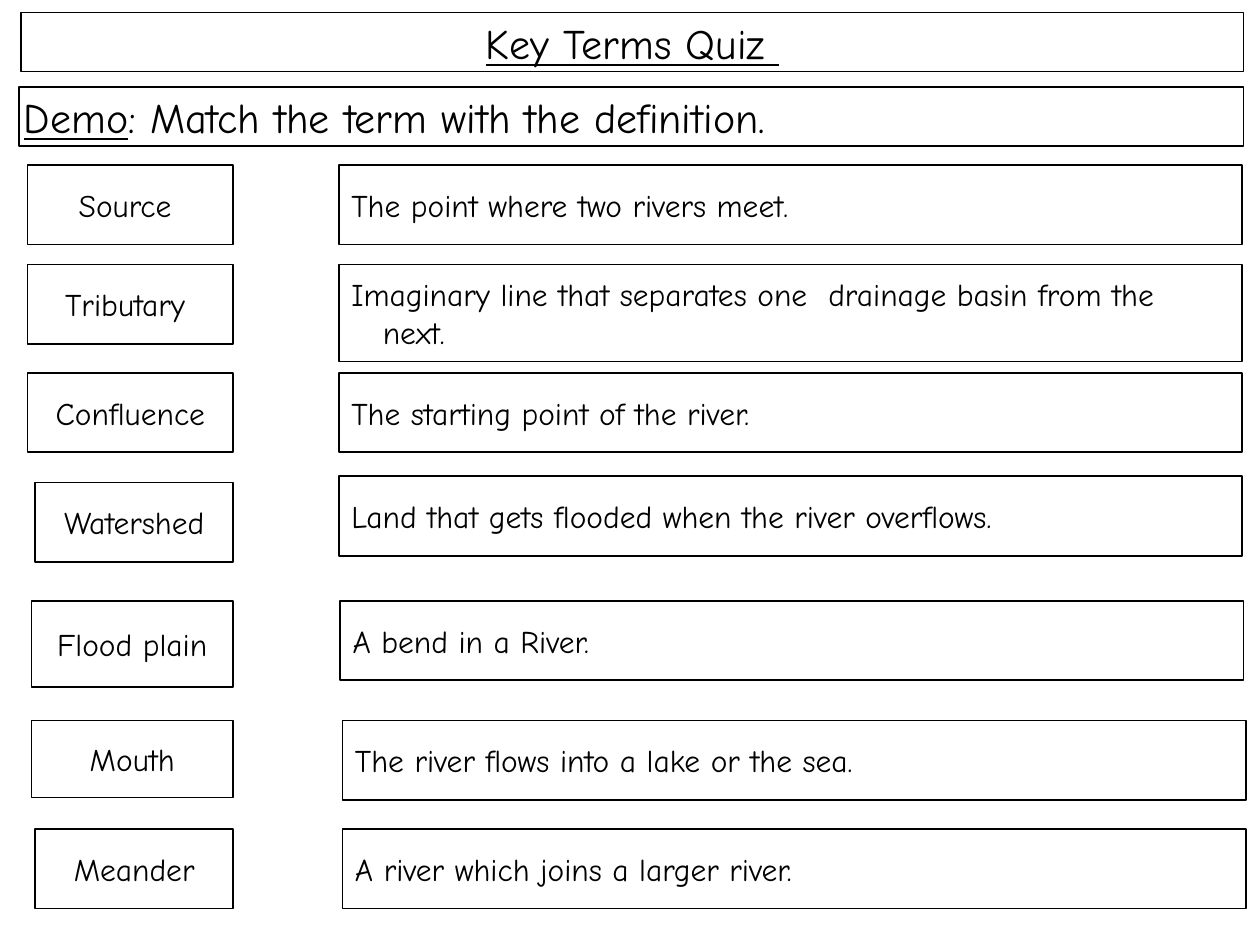
"""Build the key terms quiz slide: headings, terms and definitions to match."""
from dataclasses import dataclass

from pptx import Presentation
from pptx import util as u
from pptx.dml.color import RGBColor
from pptx.enum import shapes, text

FONT = "Comic Neue"
BLACK, WHITE = "000000", "FFFFFF"
TERM_RIGHT = 133.2
DEFINITION_WIDTH = 516.2
ROW_HEIGHT = 45.4
HANGING = 18


@dataclass
class Box:
    left: float
    top: float
    width: float
    height: float
    spans: tuple[tuple[str, bool], ...]
    size: int = 18
    centred: bool = False
    heading: bool = False
    hanging: bool = False


@dataclass
class Row:
    term: str
    term_left: float
    term_top: float
    definition: str
    definition_left: float
    definition_top: float
    term_height: float = ROW_HEIGHT
    definition_height: float = ROW_HEIGHT


HEADINGS = (
    Box(12.2, 7.2, 698.4, 33.8, (("Key Terms Quiz ", True),), 24, True, True),
    Box(10.8, 49.7, 699.8, 33.8,
        (("Demo", True), (": Match the term with the definition.", False)), 24, False, True),
)

ROWS = (
    Row("Source ", 15.8, 94.3, "The point where two rivers meet.", 193.7, 94.3),
    Row("Tributary ", 15.8, 151.2,
        "Imaginary line that separates one  drainage basin from the\vnext.",
        193.7, 151.2, definition_height=55.4),
    Row("Confluence", 15.8, 213.1, "The starting point of the river.", 193.7, 213.1),
    Row("Watershed", 20.2, 275.8,
        "Land that gets flooded when the river overflows.", 193.7, 272.2),
    Row("Flood plain", 18, 343.4, "A bend in a River.", 194.4, 343.4, term_height=49),
    Row("Mouth", 18, 411.8, "The river flows into a lake or the sea.",
        195.8, 411.8, term_height=43.9),
    Row("Meander", 20.2, 473.8, "A river which joins a larger river.", 195.8, 473.8),
)


def colour(value: str) -> RGBColor:
    """Turn a hex string into a colour."""
    return RGBColor.from_string(value)


def apply(target: object, values: dict) -> None:
    """Set each named attribute on the target."""
    for name, value in values.items():
        setattr(target, name, value)


def draw_box(page, box: Box) -> None:
    """Draw one outlined box with its text."""
    shape = page.shapes.add_shape(
        shapes.MSO_SHAPE.RECTANGLE,
        *(u.Pt(length) for length in (box.left, box.top, box.width, box.height)))
    shape.shadow.inherit = False
    shape.fill.solid()
    shape.fill.fore_color.rgb = colour(WHITE)
    shape.line.color.rgb = colour(BLACK)
    shape.line.width = u.Pt(1)

    frame = shape.text_frame
    anchor = text.MSO_ANCHOR.TOP if box.heading else text.MSO_ANCHOR.MIDDLE
    apply(frame, {"word_wrap": True, "vertical_anchor": anchor})
    if box.heading:
        sides = ("left", "top", "right", "bottom")
        apply(frame, {f"margin_{side}": u.Pt(2.9) for side in sides})

    para = frame.paragraphs[0]
    para.alignment = text.PP_ALIGN.CENTER if box.centred else text.PP_ALIGN.LEFT
    if box.hanging:
        properties = para._p.get_or_add_pPr()
        properties.set("marL", str(u.Pt(HANGING)))
        properties.set("indent", str(-u.Pt(HANGING)))
    for words, underlined in box.spans:
        for index, line in enumerate(words.split("\v")):
            if index:
                para.add_line_break()
            span = para.add_run()
            span.text = line
            apply(span.font, {"name": FONT, "size": u.Pt(box.size), "underline": underlined})
            span.font.color.rgb = colour(BLACK)


def draw_row(page, row: Row) -> None:
    """Draw a term on the left and a definition on the right."""
    draw_box(page, Box(row.term_left, row.term_top, TERM_RIGHT - row.term_left,
                       row.term_height, ((row.term, False),), centred=True))
    draw_box(page, Box(row.definition_left, row.definition_top, DEFINITION_WIDTH,
                       row.definition_height, ((row.definition, False),),
                       hanging="\v" in row.definition))


def main() -> None:
    """Create and save the deck."""
    deck = Presentation()
    apply(deck, {"slide_width": u.Pt(720), "slide_height": u.Pt(540)})
    page = deck.slides.add_slide(deck.slide_layouts[6])
    for row in ROWS:
        draw_row(page, row)
    for heading in HEADINGS:
        draw_box(page, heading)
    deck.save("out.pptx")


if __name__ == "__main__":
    main()
